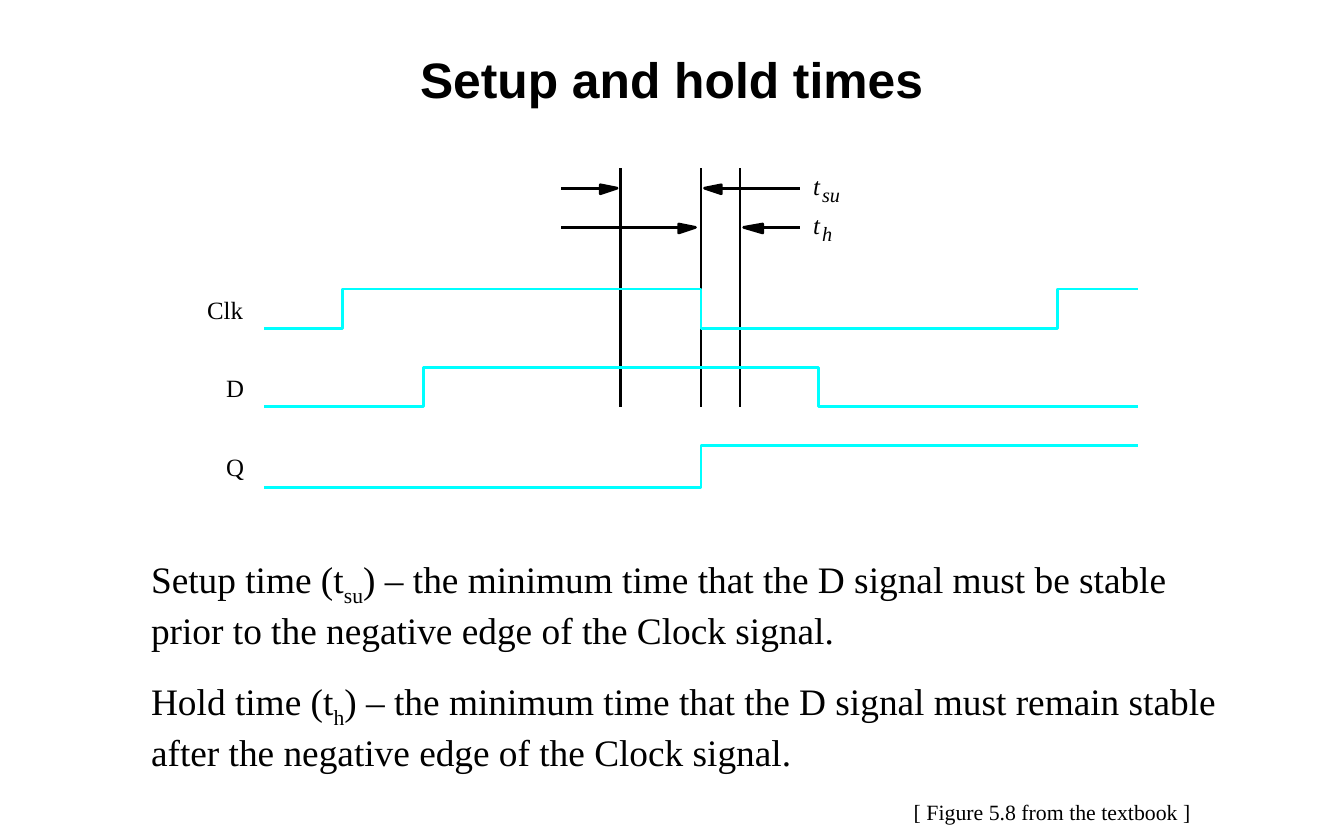
"""Build the slide on flip-flop setup and hold times with its timing diagram."""
from lxml import etree
from pptx import Presentation, util as u
from pptx.dml.color import RGBColor
from pptx.enum import shapes, text
from pptx.oxml.ns import qn

BLACK = RGBColor(0, 0, 0)
CYAN = RGBColor(0, 255, 255)
SERIF, SANS = "Times New Roman", "Arial"

STEP = 0.35
ARROW_TOP, WAVE_TOP, MARK_TOP = 1.68, 2.58, 1.5
LEFT, RIGHT = 2.36, 10.16
SETUP, EDGE, HOLD = 5.54, 6.26, 6.61
ARROW_LEFT, ARROW_RIGHT = 5.01, 7.14

WAVES = [
    ("Clk", 1.85, 0.38, 0, [3.06, EDGE, 9.44]),
    ("D", 2.02, 0.22, 0, [3.78, 7.31]),
    ("Q", 2.02, 0.22, 0.02, [EDGE]),
]
TIMINGS = [
    ("su", 0.16, [(ARROW_RIGHT, 6.44, 6.29), (ARROW_LEFT, 5.36, 5.51)]),
    ("h", 0.14, [(ARROW_RIGHT, 6.81, 6.64), (ARROW_LEFT, 6.06, 6.21)]),
]
DEFINITIONS = [
    ("Setup", "su", "be stable", "prior to", 9.48),
    ("Hold", "h", "remain stable", "after", 9.82),
]


def add_text(s, paragraphs, at, size, font=SERIF, bold=False, italic=False,
             align=text.PP_ALIGN.LEFT, anchor=text.MSO_ANCHOR.TOP,
             inset=None, wrap=True):
    """Add a text box; each paragraph is a list of (text, baseline) runs."""
    sp = s.shapes.add_textbox(*map(u.Inches, at))
    tf = sp.text_frame
    tf.word_wrap, tf.vertical_anchor = wrap, anchor
    if inset is not None:
        tf.margin_left = tf.margin_right = u.Inches(inset)
        tf.margin_top = tf.margin_bottom = u.Inches(inset)
    for i, runs in enumerate(paragraphs):
        p = tf.add_paragraph() if i else tf.paragraphs[0]
        p.alignment = align
        for words, baseline in runs:
            r = p.add_run()
            r.text = words
            r.font.name, r.font.size = font, u.Pt(size)
            r.font.bold, r.font.italic = bold, italic
            r.font.color.rgb = BLACK
            if baseline:
                r._r.get_or_add_rPr().set("baseline", str(baseline * 1000))


def add_label(s, words, at, size=16, italic=False):
    add_text(s, [[(words, 0)]], at, size, italic=italic, inset=0, wrap=False)


def add_line(s, x1, y1, x2, y2, width):
    cx = s.shapes.add_connector(shapes.MSO_CONNECTOR.STRAIGHT,
                                *map(u.Inches, (x1, y1, x2, y2)))
    cx.line.color.rgb, cx.line.width = BLACK, u.Pt(width)
    etree.SubElement(cx._element.spPr, qn("a:effectLst"))


def add_outline(s, points, color, filled=False):
    pts = [(u.Inches(x), u.Inches(y)) for x, y in points]
    fb = s.shapes.build_freeform(*pts[0])
    fb.add_line_segments(pts[1:], close=filled)
    sp = fb.convert_to_shape()
    sp.shadow.inherit = False
    sp.line.color.rgb, sp.line.width = color, u.Pt(1.75)
    if filled:
        sp.fill.solid()
        sp.fill.fore_color.rgb = color
    else:
        sp.fill.background()


def add_timing(s, row, subscript, width, arrows):
    y = ARROW_TOP + row * STEP
    for tail, back, tip in arrows:
        add_line(s, tail, y, back, y, 1.75)
        add_outline(s, [(back, y - 0.03), (tip, y), (back, y + 0.05)], BLACK, True)
    add_label(s, "t", (7.26, y - 0.16, 0.12, 0.27), italic=True)
    add_label(s, subscript, (7.34, y - 0.05, width, 0.22), 13, True)


def add_wave(s, row, name, x, width, drop, edges):
    high = WAVE_TOP + 2 * row * STEP
    levels = [high + STEP + drop, high]
    points = [(LEFT, levels[0])]
    for i, edge in enumerate(edges):
        points += [(edge, levels[i % 2]), (edge, levels[(i + 1) % 2])]
    points.append((RIGHT, levels[len(edges) % 2]))
    add_outline(s, points, CYAN)
    add_label(s, name, (x, high + 0.05, width, 0.27))


def main():
    prs = Presentation()
    prs.slide_width, prs.slide_height = u.Inches(12), u.Inches(7.5)
    s = prs.slides.add_slide(prs.slide_layouts[6])
    add_text(s, [[("Setup and hold times", 0)]], (1, 0.33, 10, 0.75), 32,
             font=SANS, bold=True, align=text.PP_ALIGN.CENTER,
             anchor=text.MSO_ANCHOR.MIDDLE)
    for x in (SETUP, EDGE, HOLD):
        add_line(s, x, MARK_TOP, x, WAVE_TOP + 3 * STEP, 1.5)
    for row, timing in enumerate(TIMINGS):
        add_timing(s, row, *timing)
    for row, wave in enumerate(WAVES):
        add_wave(s, row, *wave)
    for row, (kind, sub, need, when, width) in enumerate(DEFINITIONS):
        first = [(f"{kind} time (t", 0), (sub, -25),
                 (f") – the minimum time that the D signal must {need}", 0)]
        second = [(f"{when} the negative edge of the Clock signal.", 0)]
        add_text(s, [first, second], (1.25, 4.92 + 1.09 * row, width, 0.91), 24)
    add_text(s, [[("[ Figure 5.8 from the textbook ]", 0)]],
             (8.06, 7.08, 2.69, 0.34), 14, wrap=False)
    prs.save("out.pptx")


if __name__ == "__main__":
    main()
